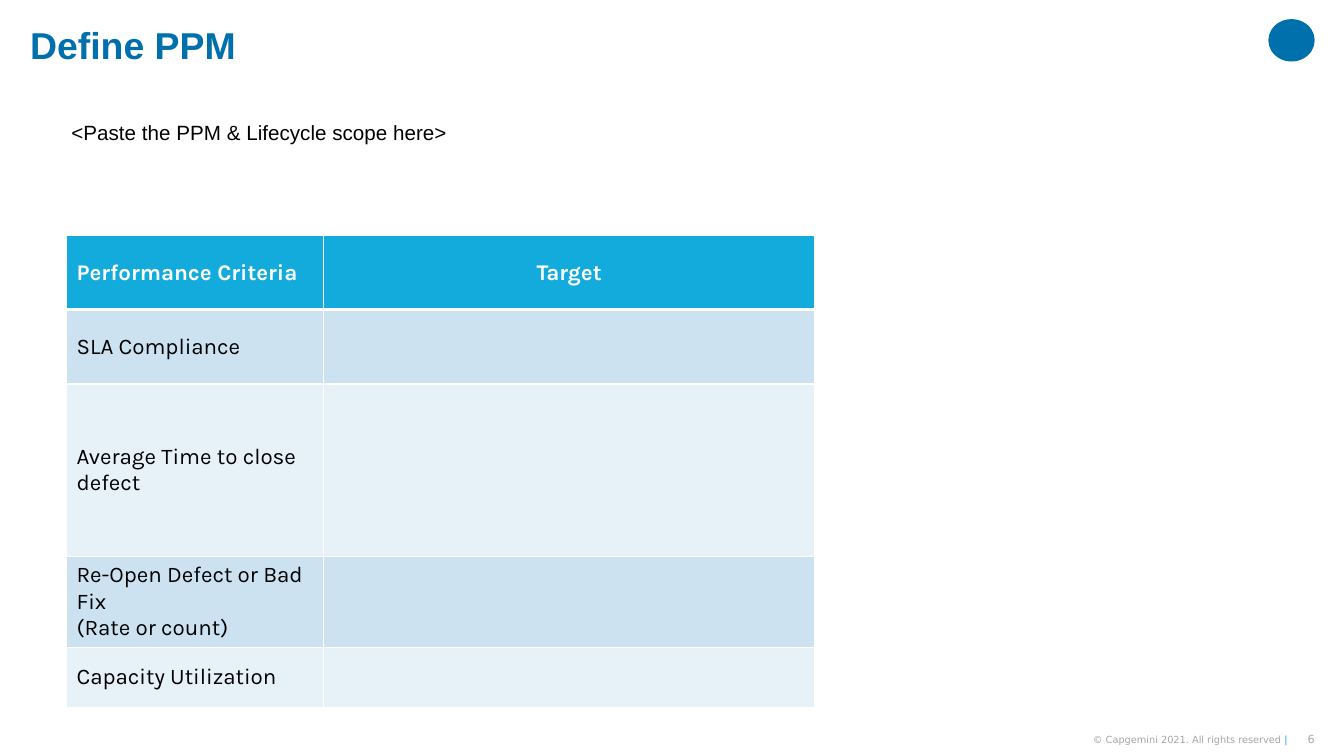
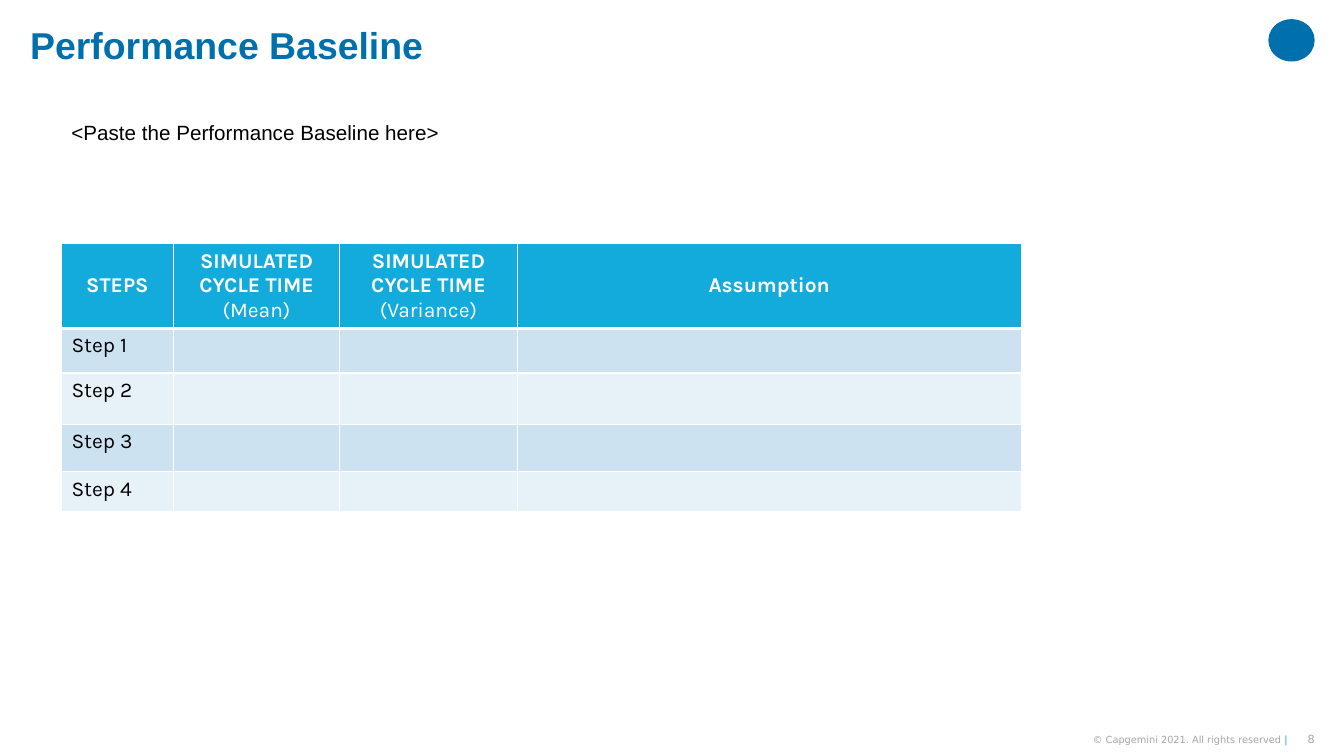
from dataclasses import dataclass

from lxml.etree import SubElement
from pptx import Presentation
from pptx.dml.color import RGBColor
from pptx.enum.shapes import MSO_SHAPE
from pptx.enum.text import MSO_ANCHOR, PP_ALIGN
from pptx.oxml.ns import qn
from pptx.util import Inches, Pt


@dataclass(frozen=True)
class Theme:
    blue: str = "0070AD"
    cyan: str = "12ABDB"
    bands: tuple = ("CCE2F1", "E7F1F8")
    white: str = "FFFFFF"
    black: str = "000000"
    grey: str = "A6A6A6"
    text_font: str = "Arial"
    table_font: str = "Karla"
    footer_font: str = "DejaVu Sans"
    title_size: float = 26.7
    body_size: float = 14.7
    number_size: float = 8
    copyright_size: float = 7


THEME = Theme()

PAGES = [
    {
        "title": "Define PPM",
        "prompt": "<Paste the PPM & Lifecycle scope here>",
        "number": "6",
        "position": (0.66, 2.34),
        "columns": [2.55, 4.87],
        "rows": [0.73, 0.74, 1.71, 0.9, 0.6],
        "size": 16,
        "anchor": MSO_ANCHOR.MIDDLE,
        "header_aligns": [PP_ALIGN.LEFT, PP_ALIGN.CENTER],
        "headers": [("Performance Criteria", ""), ("Target", "")],
        "labels": [
            "SLA Compliance",
            "Average Time to close defect",
            "Re-Open Defect or Bad Fix\n(Rate or count)",
            "Capacity Utilization",
        ],
    },
    {
        "title": "Performance Baseline",
        "prompt": "<Paste the Performance Baseline here>",
        "number": "8",
        "position": (0.61, 2.41),
        "columns": [1.11, 1.65, 1.76, 5],
        "rows": [0.84, 0.44, 0.51, 0.47, 0.4],
        "size": 15,
        "anchor": MSO_ANCHOR.TOP,
        "header_aligns": [PP_ALIGN.CENTER] * 4,
        "headers": [
            ("STEPS", ""),
            ("SIMULATED CYCLE TIME ", "(Mean)"),
            ("SIMULATED CYCLE TIME ", "(Variance)"),
            ("Assumption", ""),
        ],
        "labels": [f"Step {step}" for step in range(1, 5)],
    },
]


def add_text(slide, box, runs, font, size, bold=False, footer=False):
    """Add a one-paragraph text box; runs are (text, colour) pairs."""
    frame = slide.shapes.add_textbox(*map(Inches, box)).text_frame
    frame.word_wrap = True
    paragraph = frame.paragraphs[0]
    if footer:
        frame.margin_left = frame.margin_right = 0
        frame.margin_top = frame.margin_bottom = 0
        frame.vertical_anchor = MSO_ANCHOR.MIDDLE
        paragraph.alignment = PP_ALIGN.RIGHT
    for text, color in runs:
        run = paragraph.add_run()
        run.text = text
        run.font.name = font
        run.font.size = Pt(size)
        run.font.bold = bold
        run.font.color.rgb = RGBColor.from_string(color)
    return paragraph


def style_cell(cell, fill, top, bottom):
    """Draw white borders, with top and bottom widths in points, and the fill."""
    properties = cell._tc.get_or_add_tcPr()
    for side, width in (("L", 1), ("R", 1), ("T", top), ("B", bottom)):
        border = SubElement(properties, qn(f"a:ln{side}"), w=str(Pt(width)))
        border_fill = SubElement(border, qn("a:solidFill"))
        SubElement(border_fill, qn("a:srgbClr"), val=THEME.white)
    cell.fill.solid()
    cell.fill.fore_color.rgb = RGBColor.from_string(fill)


prs = Presentation()
prs.slide_width = Inches(13.33)
prs.slide_height = Inches(7.5)

for page in PAGES:
    slide = prs.slides.add_slide(prs.slide_layouts[6])

    emblem = slide.shapes.add_shape(
        MSO_SHAPE.OVAL, Inches(12.58), Inches(0.19), Inches(0.46), Inches(0.42))
    emblem.shadow.inherit = False
    emblem.fill.solid()
    emblem.fill.fore_color.rgb = RGBColor.from_string(THEME.blue)
    emblem.line.fill.background()

    add_text(slide, (12.85, 7.27, 0.19, 0.13), [(page["number"], THEME.grey)],
             THEME.footer_font, THEME.number_size, footer=True)
    add_text(slide, (9.86, 7.27, 2.91, 0.13),
             [("© Capgemini 2021. All rights reserved ", THEME.grey), ("|", THEME.cyan)],
             THEME.footer_font, THEME.copyright_size, footer=True)
    title = add_text(slide, (0.2, 0.22, 12.29, 0.49), [(page["title"], THEME.blue)],
                     THEME.text_font, THEME.title_size, bold=True)
    title.line_spacing = 0.9
    add_text(slide, (0.61, 1.14, 6.67, 0.35), [(page["prompt"], THEME.black)],
             THEME.text_font, THEME.body_size)

    left, top = page["position"]
    table = slide.shapes.add_table(
        len(page["rows"]), len(page["columns"]), Inches(left), Inches(top),
        Inches(sum(page["columns"])), Inches(sum(page["rows"]))).table
    for column, width in zip(table.columns, page["columns"]):
        column.width = Inches(width)
    for row, height in zip(table.rows, page["rows"]):
        row.height = Inches(height)

    for row_index, row in enumerate(table.rows):
        is_header = row_index == 0
        fill = THEME.cyan if is_header else THEME.bands[(row_index - 1) % 2]
        for cell in row.cells:
            style_cell(cell, fill, top=3 if row_index == 1 else 1,
                       bottom=3 if is_header else 1)

    for column_index, (strong, light) in enumerate(page["headers"]):
        cell = table.cell(0, column_index)
        cell.vertical_anchor = MSO_ANCHOR.MIDDLE
        cell.text_frame.text = strong
        paragraph = cell.text_frame.paragraphs[0]
        paragraph.alignment = page["header_aligns"][column_index]
        if light:
            paragraph.add_run().text = light
        for run in paragraph.runs:
            run.font.bold = run.text == strong

    for row_index, label in enumerate(page["labels"], start=1):
        cell = table.cell(row_index, 0)
        cell.vertical_anchor = page["anchor"]
        cell.text_frame.text = label

    for row_index, row in enumerate(table.rows):
        color = THEME.white if row_index == 0 else THEME.black
        for cell in row.cells:
            for paragraph in cell.text_frame.paragraphs:
                for run in paragraph.runs:
                    run.font.name = THEME.table_font
                    run.font.size = Pt(page["size"])
                    run.font.color.rgb = RGBColor.from_string(color)

prs.save("out.pptx")
